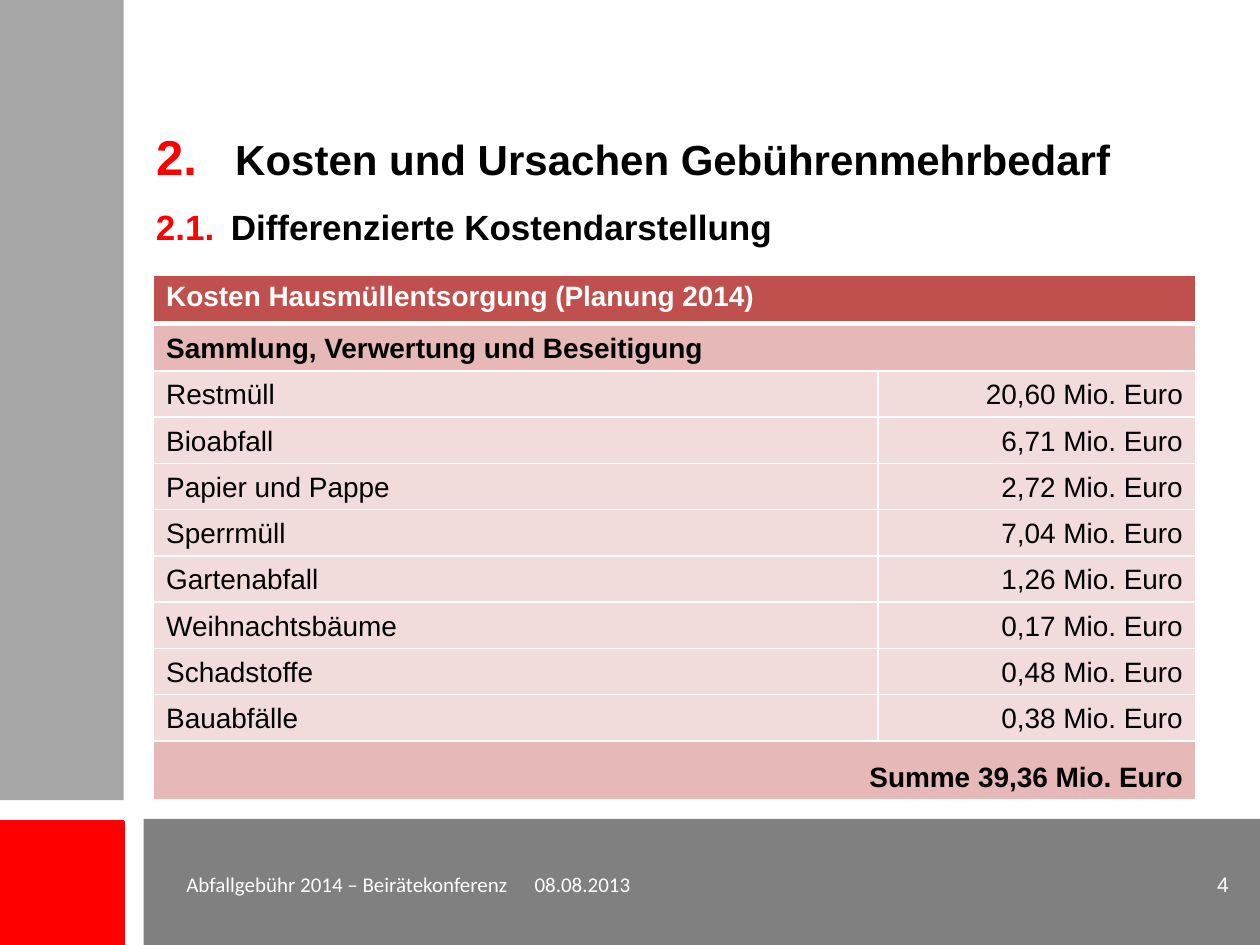
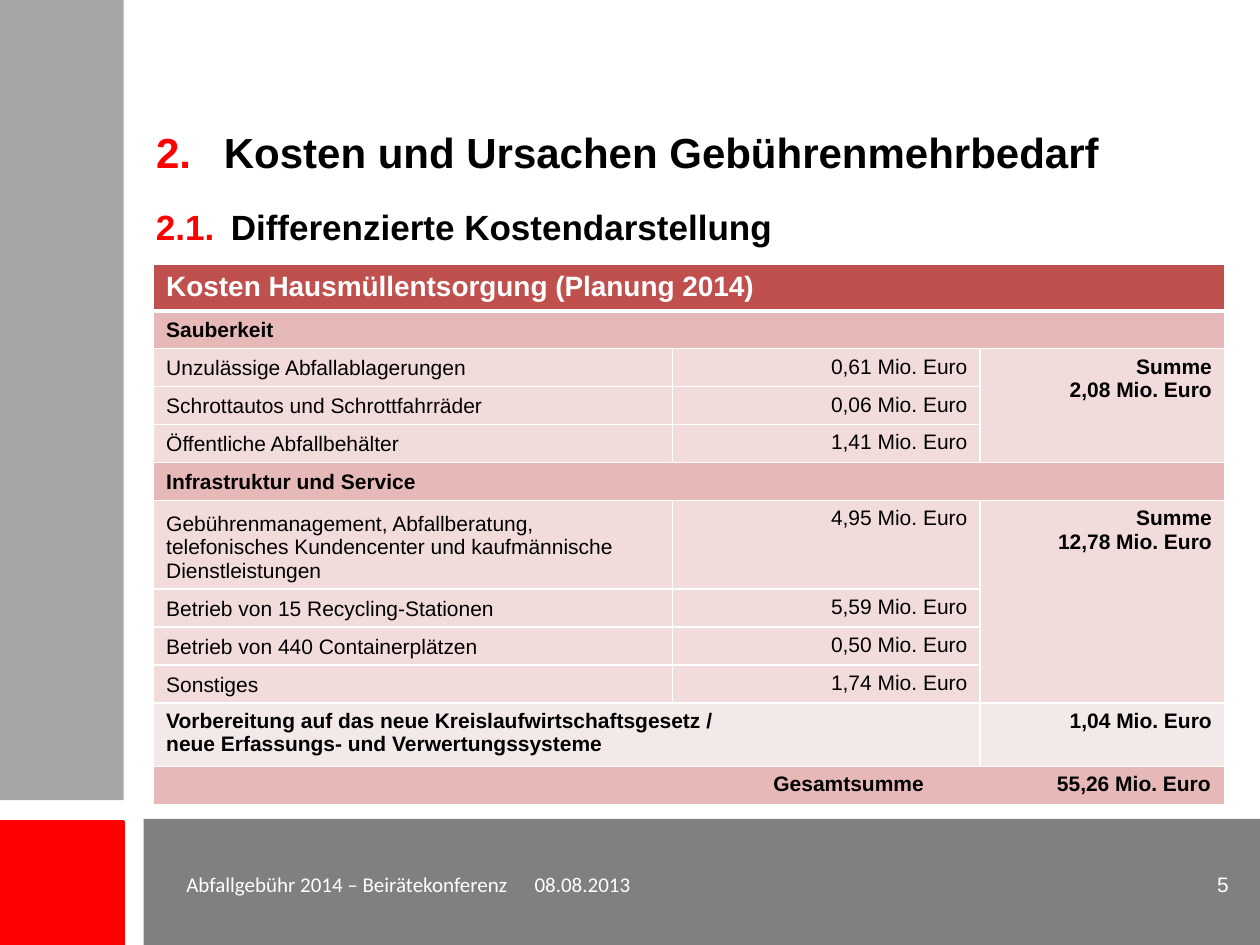
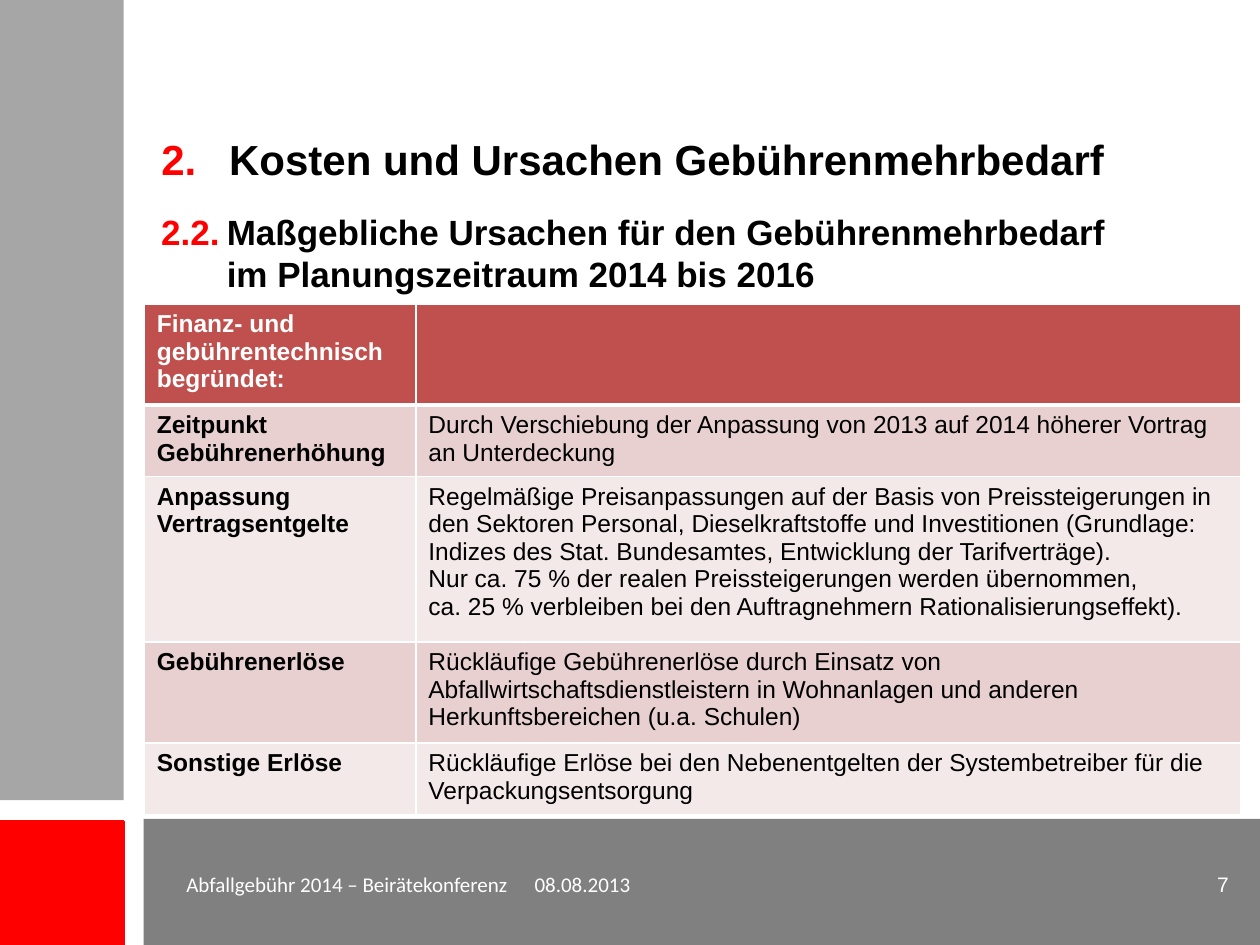
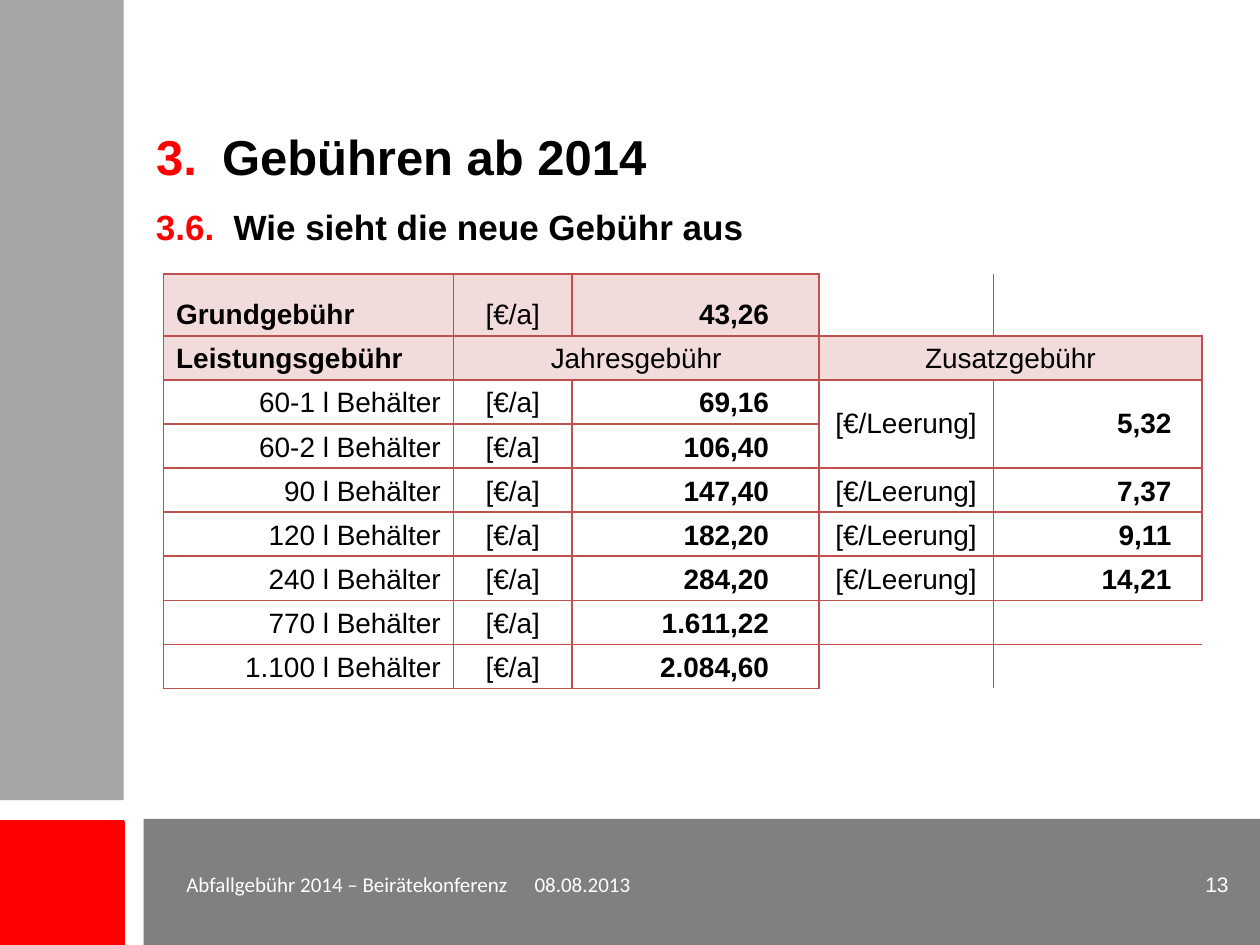
import lxml.etree
import pptx
import pptx.dml.color
import pptx.enum.shapes
import pptx.enum.text
import pptx.oxml.ns
import pptx.util

Pt = pptx.util.Pt
qn = pptx.oxml.ns.qn
rgb = pptx.dml.color.RGBColor.from_string
ALIGN = pptx.enum.text.PP_ALIGN
ANCHOR = pptx.enum.text.MSO_ANCHOR

RED, BLACK, WHITE = "FF0000", "000000", "FFFFFF"
GREY, LIGHT_GREY = "808080", "A6A6A6"
BRICK, ROSE, PALE_ROSE = "C0504D", "E6B9B8", "F2DCDB"
BAND_DARK, BAND_LIGHT = "E8D0D0", "F4E9E9"
NO_TABLE_STYLE = "{2D5ABB26-0587-4C30-8999-92F81FD0307C}"
FOOTER = "Abfallgebühr 2014 – Beirätekonferenz\t08.08.2013"


def write_text(text_frame, text, size=12, color=BLACK, bold=False, font="Arial", align=ALIGN.LEFT,
               lead="", lead_size=None, hang=0, tabs=()):
    for index, line in enumerate(text.split("\n")):
        paragraph = text_frame.add_paragraph() if index else text_frame.paragraphs[0]
        paragraph.alignment = align
        properties = paragraph._p.get_or_add_pPr()
        if hang:
            properties.set("marL", str(Pt(hang)))
            properties.set("indent", str(-Pt(hang)))
        if tabs:
            tab_list = lxml.etree.SubElement(properties, qn("a:tabLst"))
            for position, side in tabs:
                lxml.etree.SubElement(tab_list, qn("a:tab"), pos=str(Pt(position)), algn=side)
        pieces = [(lead + "\t", lead_size or size, RED)] if lead else []
        pieces += [(part, size, color) for part in line.split("\v")]
        for number, (part, part_size, part_color) in enumerate(pieces):
            if number > bool(lead):
                paragraph.add_line_break()
            if part:
                run = paragraph.add_run()
                run.text = part
                run.font.name = font
                run.font.size = Pt(part_size)
                run.font.bold = bold
                run.font.color.rgb = rgb(part_color)
        if not line:
            lxml.etree.SubElement(paragraph._p, qn("a:endParaRPr"), sz=str(size * 100))


def add_text(slide, box, text, anchor=ANCHOR.TOP, **text_format):
    text_box = slide.shapes.add_textbox(*map(Pt, box))
    text_box.text_frame.word_wrap = True
    text_box.text_frame.vertical_anchor = anchor
    write_text(text_box.text_frame, text, **text_format)


head = dict(fill=BRICK, color=WHITE, bold=True)
section = dict(fill=ROSE, bold=True, anchor=ANCHOR.BOTTOM)
label = dict(fill=PALE_ROSE, anchor=ANCHOR.BOTTOM)
amount = dict(fill=PALE_ROSE, align=ALIGN.RIGHT)
total = amount | dict(bold=True)
blank = ("", {})

waste_costs = [
    ("Restmüll", "20,60"), ("Bioabfall", "6,71"), ("Papier und Pappe", "2,72"),
    ("Sperrmüll", "7,04"), ("Gartenabfall", "1,26"), ("Weihnachtsbäume", "0,17"),
    ("Schadstoffe", "0,48"), ("Bauabfälle", "0,38"),
]
waste_rows = [
    [("Kosten Hausmüllentsorgung (Planung 2014)", head), None],
    [("Sammlung, Verwertung und Beseitigung", section), None],
    *[[(name, label), (f"{cost} Mio. Euro", amount | dict(anchor=ANCHOR.BOTTOM))]
      for name, cost in waste_costs],
    [("Summe 39,36 Mio. Euro", section | dict(align=ALIGN.RIGHT)), None],
]

service_rows = [[("Kosten Hausmüllentsorgung (Planung 2014)", head | dict(size=16)), None, None]]
for section_name, section_sum, items in [
    ("Sauberkeit", "2,08", [
        ("Unzulässige Abfallablagerungen", "0,61"),
        ("Schrottautos und Schrottfahrräder", "0,06"),
        ("Öffentliche Abfallbehälter", "1,41"),
    ]),
    ("Infrastruktur und Service", "12,78", [
        ("Gebührenmanagement, Abfallberatung, telefonisches Kundencenter und kaufmännische "
         "Dienstleistungen", "4,95"),
        ("Betrieb von 15 Recycling-Stationen", "5,59"),
        ("Betrieb von 440 Containerplätzen", "0,50"),
        ("Sonstiges", "1,74"),
    ]),
]:
    service_rows.append([(section_name, section), None, None])
    for index, (name, cost) in enumerate(items):
        sum_cell = None if index else (f"Summe\n{section_sum} Mio. Euro", total)
        service_rows.append([(name, label), (f"{cost} Mio. Euro", amount), sum_cell])
service_rows += [
    [("Vorbereitung auf das neue Kreislaufwirtschaftsgesetz /\vneue Erfassungs- und Verwertungssysteme",
      dict(fill=BAND_LIGHT, bold=True)), None, ("1,04 Mio. Euro", total | dict(fill=BAND_LIGHT))],
    [("\tGesamtsumme\t55,26 Mio. Euro",
      dict(fill=ROSE, bold=True, tabs=[(433, "r"), (597, "r")])), None, None],
]

cause_rows = [[("Finanz- und gebührentechnisch begründet:", head), ("", head)]]
for index, (cause, reason) in enumerate([
    ("Zeitpunkt Gebührenerhöhung",
     "Durch Verschiebung der Anpassung von 2013 auf 2014 höherer Vortrag an Unterdeckung"),
    ("Anpassung Vertragsentgelte",
     "Regelmäßige Preisanpassungen auf der Basis von Preissteigerungen in den Sektoren Personal, "
     "Dieselkraftstoffe und Investitionen (Grundlage: Indizes des Stat. Bundesamtes, Entwicklung "
     "der Tarifverträge).\nNur ca. 75 % der realen Preissteigerungen werden übernommen,\v"
     "ca. 25 % verbleiben bei den Auftragnehmern Rationalisierungseffekt)."),
    ("Gebührenerlöse",
     "Rückläufige Gebührenerlöse durch Einsatz von Abfallwirtschaftsdienstleistern in Wohnanlagen "
     "und anderen Herkunftsbereichen (u.a. Schulen)"),
    ("Sonstige Erlöse",
     "Rückläufige Erlöse bei den Nebenentgelten der Systembetreiber für die Verpackungsentsorgung"),
]):
    band = dict(fill=BAND_LIGHT if index % 2 else BAND_DARK)
    cause_rows.append([(cause, band | dict(bold=True)), (reason, band)])

bottom = dict(anchor=ANCHOR.BOTTOM)
unit = dict(align=ALIGN.CENTER, anchor=ANCHOR.BOTTOM)
fee = dict(align=ALIGN.RIGHT, anchor=ANCHOR.BOTTOM, bold=True, margin_right=28.6)
extra_fee = fee | dict(margin_right=17.6)
middle = dict(anchor=ANCHOR.MIDDLE)
pale = dict(fill=PALE_ROSE)
fee_rows = [
    [("Grundgebühr", label | dict(bold=True)), ("[€/a]", unit | pale), ("43,26", fee | pale), blank, blank],
    [("Leistungsgebühr", label | dict(bold=True)), ("Jahresgebühr", unit | pale), None,
     ("Zusatzgebühr", unit | pale), None],
]
for container, yearly, extra in [
    ("60-1 l", "69,16", [("[€/Leerung]", unit | middle), ("5,32", extra_fee | middle)]),
    ("60-2 l", "106,40", [None, None]),
    ("90 l", "147,40", [("[€/Leerung]", unit), ("7,37", extra_fee)]),
    ("120 l", "182,20", [("[€/Leerung]", unit), ("9,11", extra_fee)]),
    ("240 l", "284,20", [("[€/Leerung]", unit), ("14,21", extra_fee)]),
    ("770 l", "1.611,22", [blank, blank]),
    ("1.100 l", "2.084,60", [blank, blank]),
]:
    fee_rows.append([(f"{container} Behälter", bottom | dict(align=ALIGN.RIGHT)), ("[€/a]", unit),
                     (yearly, fee), *extra])
fee_rows.append([blank] * 5)

costs_title = "Kosten und Ursachen Gebührenmehrbedarf"
slides = [
    dict(number=4, title=("2.", costs_title), title_box=(82, 68.4, 613, 41), title_size=24,
         lead_size=28, title_hang=45.2, subtitle=("2.1.", "Differenzierte Kostendarstellung"),
         subtitle_box=(82, 113.8, 564.5, 31), subtitle_hang=42.8,
         rows=waste_rows, position=(87.8, 157), size=16, columns=[414, 181.4],
         heights=[28, 27] + [26.4] * 8 + [33.8], merges=[(0, 0, 0, 1), (1, 0, 1, 1), (10, 0, 10, 1)],
         border=WHITE, head_rule=3, padding=3.6),
    dict(number=5, title=("2.", costs_title), title_box=(82, 68.4, 564.5, 70.6), title_size=24,
         lead_size=24, title_hang=38.7, subtitle=("2.1.", "Differenzierte Kostendarstellung"),
         subtitle_box=(82, 113.8, 564.5, 31), subtitle_hang=42.8,
         rows=service_rows, position=(87.8, 151.2), size=12, columns=[296.6, 175.7, 139.7],
         heights=[25.6, 21.3] + [21.7] * 3 + [21.4, 50.6] + [21.7] * 3 + [36.4, 21.3],
         merges=[(0, 0, 0, 2), (1, 0, 1, 2), (2, 2, 4, 2), (5, 0, 5, 2), (6, 2, 9, 2),
                 (10, 0, 10, 1), (11, 0, 11, 2)],
         border=WHITE, head_rule=3, padding=3.6),
    dict(number=7, title=("2.", costs_title), title_box=(85, 72.7, 564.5, 70.6), title_size=24,
         lead_size=24, title_hang=38.7,
         subtitle=("2.2.", "Maßgebliche Ursachen für den Gebührenmehrbedarf\v"
                           "im Planungszeitraum 2014 bis 2016"),
         subtitle_box=(85, 116.6, 564.5, 80), subtitle_hang=37.5,
         rows=cause_rows, position=(82.4, 173.8), size=14, columns=[155.2, 471.2],
         heights=[56.8, 40.9, 94.6, 57.7, 40.7], merges=[], border=WHITE, head_rule=3, padding=3.6),
    dict(number=13, title=("3.", "Gebühren ab 2014"), title_box=(82, 68.4, 564.5, 41), title_size=28,
         lead_size=28, title_hang=37.7, subtitle=("3.6.", "Wie sieht die neue Gebühr aus"),
         subtitle_box=(82, 113.8, 564.5, 31), subtitle_hang=44.4,
         rows=fee_rows, position=(93.5, 156.7), size=16, columns=[165.6, 67.8, 141.1, 99.7, 119.3],
         heights=[35.3] + [25] * 8 + [46.5],
         merges=[(1, 1, 1, 2), (1, 3, 1, 4), (2, 3, 3, 3), (2, 4, 3, 4)],
         border=BRICK, head_rule=1, padding=3),
]

presentation = pptx.Presentation()
presentation.slide_width, presentation.slide_height = Pt(720), Pt(540)
layout = presentation.slide_layouts[5]

for content in slides:
    slide = presentation.slides.add_slide(layout)
    if content is slides[0]:
        for index, (box, fill, line) in enumerate([
            ((0, 469.4, 70.6, 70.6), RED, RED),
            ((82, 468, 638, 72), GREY, None),
            ((0, 0, 70.6, 457.2), LIGHT_GREY, None),
        ]):
            band = slide.shapes.add_shape(pptx.enum.shapes.MSO_SHAPE.RECTANGLE, *map(Pt, box))
            band.shadow.inherit = False
            band.fill.solid()
            band.fill.fore_color.rgb = rgb(fill)
            if line:
                band.line.color.rgb = rgb(line)
                band.line.width = Pt(2)
            else:
                band.line.fill.background()
            layout.shapes.element.insert(2 + index, band.element)

    title = slide.shapes.title
    title.left, title.top, title.width, title.height = map(Pt, content["title_box"])
    title.text_frame.word_wrap = True
    title.text_frame.auto_size = pptx.enum.text.MSO_AUTO_SIZE.NONE
    title.text_frame.vertical_anchor = ANCHOR.TOP
    lead, text = content["title"]
    write_text(title.text_frame, text, lead=lead, size=content["title_size"],
               lead_size=content["lead_size"], hang=content["title_hang"], bold=True)
    lead, text = content["subtitle"]
    add_text(slide, content["subtitle_box"], text, lead=lead, size=20,
             hang=content["subtitle_hang"], bold=True)
    add_text(slide, (99.4, 491, 447.8, 28.8), FOOTER, anchor=ANCHOR.MIDDLE, color=WHITE,
             font="Calibri", tabs=[(199, "l")])
    add_text(slide, (644.4, 491, 64.8, 28.8), str(content["number"]), anchor=ANCHOR.MIDDLE,
             color=WHITE, align=ALIGN.RIGHT)

    rows, columns, heights = content["rows"], content["columns"], content["heights"]
    table_frame = slide.shapes.add_table(len(rows), len(columns), *map(Pt, content["position"]),
                                         Pt(sum(columns)), Pt(sum(heights)))
    table_frame.element.xpath(".//a:tableStyleId")[0].text = NO_TABLE_STYLE
    table = table_frame.table
    table.first_row = table.horz_banding = False
    for column, width in zip(table.columns, columns):
        column.width = Pt(width)
    for row, height in zip(table.rows, heights):
        row.height = Pt(height)
    outlined = {(r, c) for r, row in enumerate(rows) for c, entry in enumerate(row) if entry is not blank}
    for r, row in enumerate(rows):
        for c, entry in enumerate(row):
            cell = table.cell(r, c)
            text, cell_format = entry or blank
            cell_format = {"size": content["size"], **cell_format}
            fill = cell_format.pop("fill", None)
            cell.vertical_anchor = cell_format.pop("anchor", ANCHOR.TOP)
            cell.margin_right = Pt(cell_format.pop("margin_right", 7.2))
            cell.margin_top = cell.margin_bottom = Pt(content["padding"])
            write_text(cell.text_frame, text, **cell_format)
            for side, down, across in [("L", 0, -1), ("R", 0, 1), ("T", -1, 0), ("B", 1, 0)]:
                if outlined & {(r, c), (r + down, c + across)}:
                    under_head = (r, side) in [(0, "B"), (1, "T")]
                    width = content["head_rule"] if under_head else 1
                    line = lxml.etree.SubElement(cell._tc.get_or_add_tcPr(), qn(f"a:ln{side}"),
                                                 w=str(Pt(width)))
                    line_fill = lxml.etree.SubElement(line, qn("a:solidFill"))
                    lxml.etree.SubElement(line_fill, qn("a:srgbClr"), val=content["border"])
            if fill:
                cell.fill.solid()
                cell.fill.fore_color.rgb = rgb(fill)
            else:
                cell.fill.background()
    for top, left, last_row, last_column in content["merges"]:
        table.cell(top, left).merge(table.cell(last_row, last_column))

presentation.save("out.pptx")
